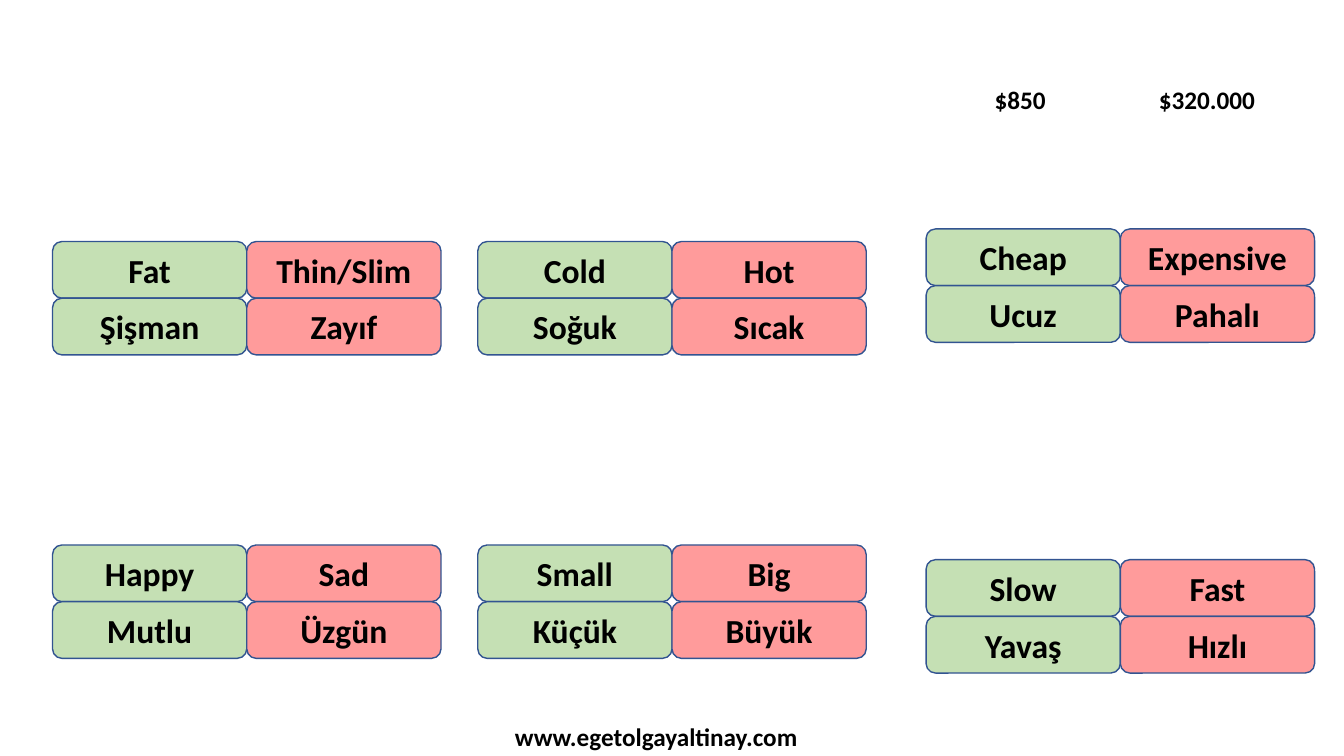
from pptx import Presentation
from pptx.dml.color import RGBColor
from pptx.enum.shapes import MSO_SHAPE
from pptx.enum.text import MSO_ANCHOR, PP_ALIGN
from pptx.util import Pt

PX = 9525
GREEN, RED, BLUE, BLACK = "C5E0B4", "FF9B9B", "325491", "000000"
CARD_W, CARD_H = 185, 54

GROUPS = [
    (50, 230, [("Fat", "Şişman"), ("Thin/Slim", "Zayıf")]),
    (455, 230, [("Cold", "Soğuk"), ("Hot", "Sıcak")]),
    (882, 218, [("Cheap", "Ucuz"), ("Expensive", "Pahalı")]),
    (50, 519, [("Happy", "Mutlu"), ("Sad", "Üzgün")]),
    (455, 519, [("Small", "Küçük"), ("Big", "Büyük")]),
    (882, 533, [("Slow", "Yavaş"), ("Fast", "Hızlı")]),
]
LABELS = [
    ("$850", (900, 76, 143, 38)),
    ("$320.000", (1078, 76, 143, 38)),
    ("www.egetolgayaltinay.com", (361, 682, 528, 38)),
]


def color(code):
    return RGBColor.from_string(code)


def scale(box):
    return [n * PX for n in box]


def write(shape, text, size):
    frame = shape.text_frame
    frame.word_wrap = True
    para = frame.paragraphs[0]
    para.text = text
    para.alignment = PP_ALIGN.CENTER
    font = para.font
    font.name, font.size, font.bold = "Calibri", Pt(size), True
    font.color.rgb = color(BLACK)


def add_card(slide, box, text, fill):
    card = slide.shapes.add_shape(MSO_SHAPE.ROUNDED_RECTANGLE, *scale(box))
    card.shadow.inherit = False
    card.fill.solid()
    card.fill.fore_color.rgb = color(fill)
    card.line.color.rgb = color(BLUE)
    card.line.width = Pt(1)
    card.text_frame.vertical_anchor = MSO_ANCHOR.MIDDLE
    write(card, text, 24)


def add_group(slide, left, top, pairs):
    for col, (words, fill) in enumerate(zip(pairs, (GREEN, RED))):
        for row, word in enumerate(words):
            box = (left + col * CARD_W, top + row * CARD_H, CARD_W, CARD_H)
            add_card(slide, box, word, fill)


def add_label(slide, text, box):
    write(slide.shapes.add_textbox(*scale(box)), text, 18)


def main():
    deck = Presentation()
    deck.slide_width, deck.slide_height = scale((1280, 720))
    slide = deck.slides.add_slide(deck.slide_layouts[6])
    for left, top, pairs in GROUPS:
        add_group(slide, left, top, pairs)
    for text, box in LABELS:
        add_label(slide, text, box)
    deck.save("out.pptx")


if __name__ == "__main__":
    main()
